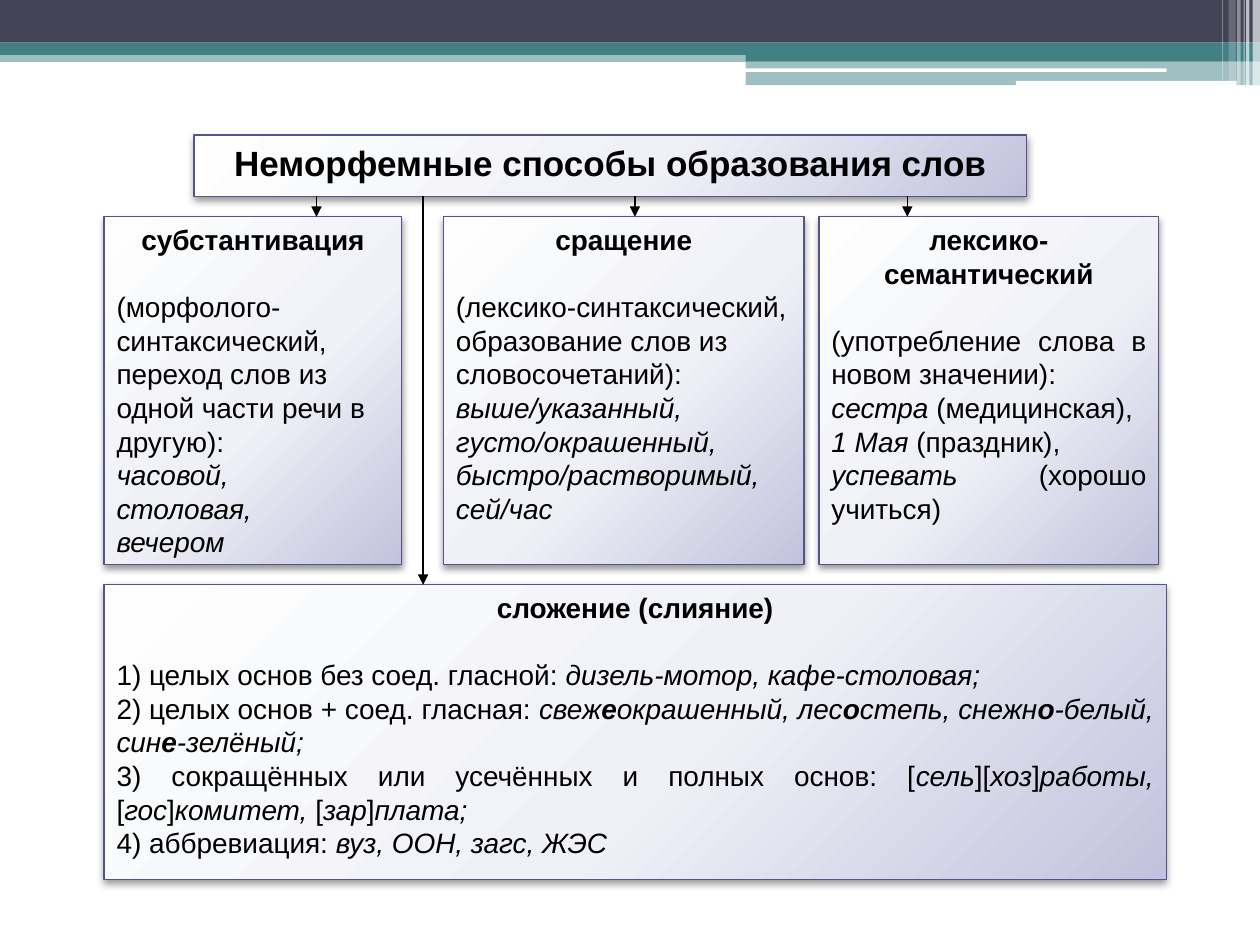
from lxml import etree
from pptx import Presentation
from pptx.dml.color import RGBColor
from pptx.enum.shapes import MSO_CONNECTOR, MSO_SHAPE
from pptx.enum.text import MSO_ANCHOR, PP_ALIGN
from pptx.oxml import parse_xml
from pptx.oxml.ns import nsdecls, qn
from pptx.util import Cm, Pt

RECT, ROUND = MSO_SHAPE.RECTANGLE, MSO_SHAPE.ROUNDED_RECTANGLE
STRAIGHT = MSO_CONNECTOR.STRAIGHT
TOP = MSO_ANCHOR.TOP
LEFT, MID, JUST = PP_ALIGN.LEFT, PP_ALIGN.CENTER, PP_ALIGN.JUSTIFY

THEME = {
    "dark": "424456", "teal": "438086", "white": "FFFFFF",
    "edge": "53548A", "ink": "000000",
    "grad": [(0, "FEFEFE"), (55, "F0F1F7"), (100, "C2C2DD")],
    "font": "Arial", "head": 20, "body": 16, "gap": 19, "line": 0.75,
}

deck = Presentation()
deck.slide_width, deck.slide_height = Cm(25.4), Cm(19.05)
slide = deck.slides.add_slide(deck.slide_layouts[6])


def add_box(kind, left, top, width, height):
    box = slide.shapes.add_shape(kind, Cm(left), Cm(top), Cm(width), Cm(height))
    box.shadow.inherit = False
    return box


def add_text(frame, align, runs, size):
    para = frame.paragraphs[0]
    if para.runs:
        para = frame.add_paragraph()
    para.alignment = align
    for text, style in runs:
        run = para.add_run()
        run.text = text
        font = run.font
        font.name, font.size = THEME["font"], Pt(size)
        font.bold, font.italic = "b" in style, "i" in style
        font.color.rgb = RGBColor.from_string(THEME["ink"])
    return para


bands = [
    (RECT, 0, 1.02, 25.4, 0.23, "teal", 50),
    (RECT, 0, 0, 25.4, 0.86, "dark", 100),
    (RECT, 0, 0.86, 25.4, 0.25, "teal", 100),
    (RECT, 15.03, 0.99, 10.37, 0.24, "teal", 100),
    (RECT, 15.03, 1.23, 10.37, 0.49, "teal", 50),
    (ROUND, 15.01, 1.38, 8.51, 0.07, "white", 100),
    (ROUND, 20.48, 1.63, 4.45, 0.1, "white", 100),
    (RECT, 25.25, 0, 0.15, 1.73, "white", 65),
    (RECT, 25.12, 0, 0.07, 1.73, "white", 65),
    (RECT, 25.07, 0, 0.02, 1.73, "white", 60),
    (RECT, 24.94, 0, 0.07, 1.73, "white", 40),
    (RECT, 24.77, 0, 0.14, 1.63, "white", 20),
    (RECT, 24.64, 0, 0.02, 1.63, "white", 30),
]
for kind, left, top, width, height, tone, alpha in bands:
    band = add_box(kind, left, top, width, height)
    band.fill.solid()
    band.fill.fore_color.rgb = RGBColor.from_string(THEME[tone])
    band.line.fill.background()
    color = band.fill._xPr.find(".//" + qn("a:srgbClr"))
    etree.SubElement(color, qn("a:alpha"), val=str(alpha * 1000))

stops = "".join(
    f'<a:gs pos="{pos * 1000}"><a:srgbClr val="{tone}"/></a:gs>'
    for pos, tone in THEME["grad"]
)
GRAD = (
    f'<a:gradFill {nsdecls("a")} rotWithShape="1"><a:gsLst>{stops}</a:gsLst>'
    '<a:path path="circle"><a:fillToRect l="-40000" t="-90000" r="140000" b="190000"/>'
    '</a:path></a:gradFill>'
)
SHADE = (
    f'<a:outerShdw {nsdecls("a")} blurRad="52000" dist="25400" dir="5400000" rotWithShape="0">'
    f'<a:srgbClr val="{THEME["ink"]}"><a:alpha val="40000"/></a:srgbClr></a:outerShdw>'
)
ARROW = f'<a:tailEnd {nsdecls("a")} type="triangle"/>'

head_y, head_h = 2.72, 1.24
row_y, row_h = 4.37, 7.01
sum_y, sum_h = 11.79, 5.94

cards = [
    ((3.91, head_y, 16.79, head_h), "head", "Неморфемные способы образования слов", []),
    ((2.1, sum_y, 21.41, sum_h), "body", "сложение (слияние)", [
        (JUST, [("1) целых основ без соед. гласной: ", ""),
                ("дизель-мотор, кафе-столовая;", "i")]),
        (JUST, [("2) целых основ + соед. гласная: ", ""), ("свеж", "i"), ("е", "bi"),
                ("окрашенный, лес", "i"), ("о", "bi"), ("степь, снежн", "i"), ("о", "bi"),
                ("-белый, син", "i"), ("е", "bi"), ("-зелёный;", "i")]),
        (JUST, [("3) сокращённых или усечённых и полных основ: [", ""), ("сель", "i"),
                ("][", ""), ("хоз", "i"), ("]", ""), ("работы,", "i"), (" [", ""),
                ("гос", "i"), ("]", ""), ("комитет,", "i"), (" [", ""), ("зар", "i"),
                ("]", ""), ("плата;", "i")]),
        (LEFT, [("4) аббревиация:", ""), (" вуз, ООН, загс, ЖЭС", "i")]),
    ]),
    ((8.94, row_y, 7.27, row_h), "body", "сращение", [
        (LEFT, [("(лексико-синтаксический, образование слов из словосочетаний):", "")]),
        (LEFT, [("выше/указанный,", "i")]),
        (LEFT, [("густо/окрашенный,", "i")]),
        (LEFT, [("быстро/растворимый, сей/час", "i")]),
    ]),
    ((2.1, row_y, 6, row_h), "body", "субстантивация", [
        (LEFT, [("(морфолого-синтаксический, переход слов из одной части речи в другую):", "")]),
        (LEFT, [("часовой,", "i")]),
        (LEFT, [("столовая,", "i")]),
        (LEFT, [("вечером", "i")]),
    ]),
    ((16.51, row_y, 6.85, row_h), "body", "лексико-семантический", [
        (JUST, [("(употребление слова в новом значении):", "")]),
        (JUST, [("сестра", "i"), (" (медицинская),", "")]),
        (JUST, [("1 Мая", "i"), (" (праздник),", "")]),
        (JUST, [("успевать ", "i"), ("(хорошо учиться)", "")]),
    ]),
]
for place, size, title, paras in cards:
    card = add_box(RECT, *place)
    props = card._element.spPr
    props.find(qn("a:prstGeom")).addnext(parse_xml(GRAD))
    props.find(qn("a:effectLst")).append(parse_xml(SHADE))
    card.line.color.rgb = RGBColor.from_string(THEME["edge"])
    card.line.width = Pt(THEME["line"])
    frame = card.text_frame
    frame.word_wrap = True
    frame.vertical_anchor = TOP
    para = add_text(frame, MID, [(title, "b")], THEME[size])
    if paras:
        para.space_after = Pt(THEME["gap"])
    for align, runs in paras:
        add_text(frame, align, runs, THEME["body"])

start = head_y + head_h
for x, end in [(6.38, row_y), (12.8, row_y), (18.29, row_y), (8.53, sum_y)]:
    link = slide.shapes.add_connector(STRAIGHT, Cm(x), Cm(start), Cm(x), Cm(end))
    link.line.color.rgb = RGBColor.from_string(THEME["ink"])
    link.line.width = Pt(THEME["line"])
    props = link._element.spPr
    props.find(qn("a:ln")).append(parse_xml(ARROW))
    etree.SubElement(props, qn("a:effectLst"))

deck.save("out.pptx")
